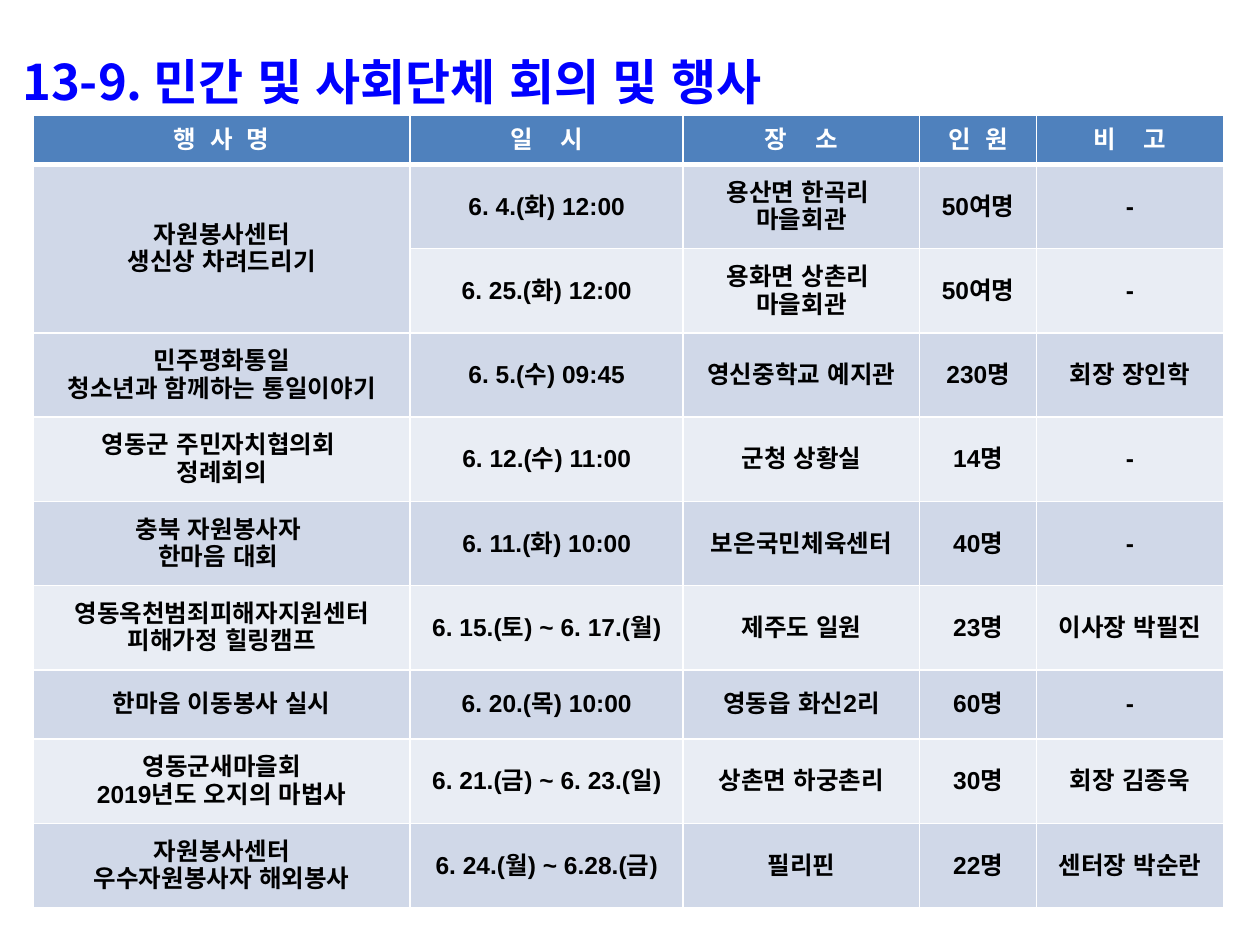
"""Build the slide listing meetings and events of civic and social groups."""
import pptx
import pptx.util
import pptx.dml.color
import pptx.enum.text
import lxml.etree

Pt = pptx.util.Pt
COLORS = {
    "title": "0000FF",
    "header": "4F81BD",
    "band": "D0D8E8",
    "light": "E9EDF4",
    "white": "FFFFFF",
    "text": "000000",
}
HEADERS = [("행 사 명", 200), ("일 시", 600), ("장 소", 600), ("인 원", 200), ("비 고", 600)]
EVENTS = [
    ("자원봉사센터\n생신상 차려드리기", "6. 4.(화) 12:00", "용산면 한곡리 \n마을회관", "50여명", "-"),
    (None, "6. 25.(화) 12:00", "용화면 상촌리 \n마을회관", "50여명", "-"),
    ("민주평화통일\n청소년과 함께하는 통일이야기", "6. 5.(수) 09:45", "영신중학교 예지관", "230명", "회장 장인학"),
    ("영동군 주민자치협의회 \n정례회의", "6. 12.(수) 11:00", "군청 상황실", "14명", "-"),
    ("충북 자원봉사자 \n한마음 대회 ", "6. 11.(화) 10:00", "보은국민체육센터", "40명", "-"),
    ("영동옥천범죄피해자지원센터\n피해가정 힐링캠프", "6. 15.(토) ~ 6. 17.(월)", "제주도 일원", "23명", "이사장 박필진"),
    ("한마음 이동봉사 실시", "6. 20.(목) 10:00", "영동읍 화신2리", "60명", "-"),
    ("영동군새마을회\n2019년도 오지의 마법사", "6. 21.(금) ~ 6. 23.(일)", "상촌면 하궁촌리", "30명", "회장 김종욱"),
    ("자원봉사센터\n우수자원봉사자 해외봉사", "6. 24.(월) ~ 6.28.(금)", "필리핀", "22명", "센터장 박순란"),
]
COLUMN_WIDTHS = [215.3, 156, 135.2, 66.8, 106.8]
ROW_HEIGHTS = [28] + [48.15] * 6 + [39.6] + [48.15] * 2


def add_span(para, text, size, font, color):
    span = para.add_run()
    span.text = text
    span.font.size = Pt(size)
    span.font.name = font
    span.font.bold = True
    span.font.color.rgb = pptx.dml.color.RGBColor.from_string(COLORS[color])
    properties = span._r.get_or_add_rPr()
    lxml.etree.SubElement(properties, pptx.oxml.ns.qn("a:ea"), typeface="Arial")
    return span


def style_cell(cell, fill, top, bottom):
    properties = cell._tc.get_or_add_tcPr()
    for side, width in (("L", 1), ("R", 1), ("T", top), ("B", bottom)):
        line = lxml.etree.SubElement(properties, pptx.oxml.ns.qn(f"a:ln{side}"), w=str(Pt(width)))
        paint = lxml.etree.SubElement(line, pptx.oxml.ns.qn("a:solidFill"))
        lxml.etree.SubElement(paint, pptx.oxml.ns.qn("a:srgbClr"), val=COLORS["white"])
    cell.fill.solid()
    cell.fill.fore_color.rgb = pptx.dml.color.RGBColor.from_string(COLORS[fill])
    cell.vertical_anchor = pptx.enum.text.MSO_ANCHOR.MIDDLE


deck = pptx.Presentation()
deck.slide_width, deck.slide_height = Pt(720), Pt(540)
page = deck.slides.add_slide(deck.slide_layouts[6])

box = page.shapes.add_textbox(Pt(-0.72), Pt(9.36), Pt(720), Pt(504.72))
box.text_frame.word_wrap = True
para = box.text_frame.paragraphs[0]
para.line_spacing = 1.5
add_span(para, " 13-9. 민간 및 사회단체 회의 및 행사", 28, "Noto Sans CJK KR", "title")

table = page.shapes.add_table(
    len(ROW_HEIGHTS), len(COLUMN_WIDTHS), Pt(19.1), Pt(66),
    Pt(sum(COLUMN_WIDTHS)), Pt(sum(ROW_HEIGHTS)),
).table
for column, width in zip(table.columns, COLUMN_WIDTHS):
    column.width = Pt(width)
for row, height in zip(table.rows, ROW_HEIGHTS):
    row.height = Pt(height)

for index, (label, tracking) in enumerate(HEADERS):
    cell = table.cell(0, index)
    style_cell(cell, "header", 1, 3)
    para = cell.text_frame.paragraphs[0]
    para.alignment = pptx.enum.text.PP_ALIGN.CENTER
    span = add_span(para, label, 14, "Arial", "white")
    span._r.get_or_add_rPr().set("spc", str(tracking))

for number, event in enumerate(EVENTS, start=1):
    for index, text in enumerate(event):
        cell = table.cell(number, index)
        style_cell(cell, "band" if number % 2 else "light", 3 if number == 1 else 1, 1)
        if text is None:
            table.cell(number - 1, index).merge(cell)
            continue
        for position, wording in enumerate(text.split("\n")):
            frame = cell.text_frame
            para = frame.add_paragraph() if position else frame.paragraphs[0]
            para.alignment = pptx.enum.text.PP_ALIGN.CENTER
            add_span(para, wording, 14, "Arial", "text")

deck.save("out.pptx")
